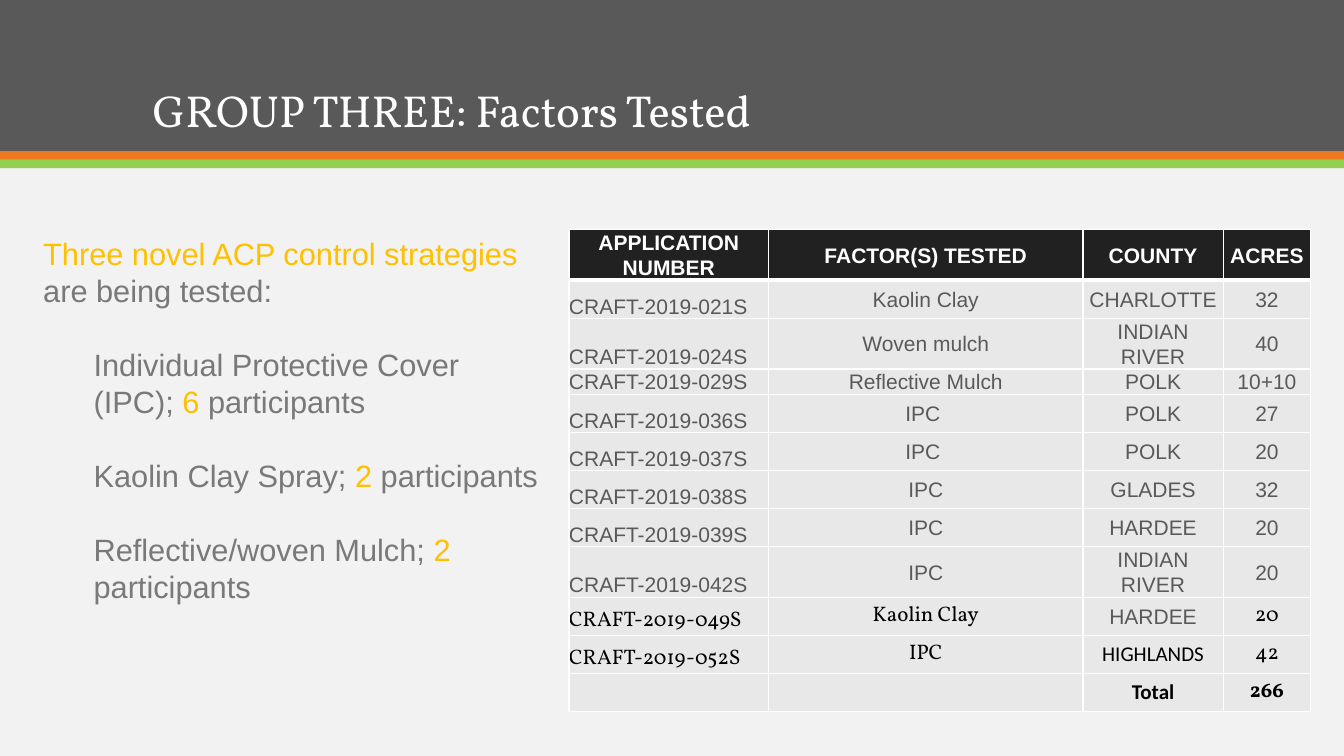
from lxml.etree import SubElement
from pptx import Presentation
from pptx.dml.color import RGBColor
from pptx.enum.shapes import MSO_SHAPE
from pptx.enum.text import MSO_ANCHOR, PP_ALIGN
from pptx.oxml.ns import qn
from pptx.util import Pt

WHITE = RGBColor(0xFF, 0xFF, 0xFF)
BLACK = RGBColor(0, 0, 0)
BACKGROUND = RGBColor(0xF2, 0xF2, 0xF2)
DARK_GRAY = RGBColor(0x59, 0x59, 0x59)
TEXT_GRAY = RGBColor(0x79, 0x79, 0x79)
ORANGE = RGBColor(0xEF, 0x79, 0x20)
GREEN = RGBColor(0x92, 0xD0, 0x50)
GOLD = RGBColor(0xFF, 0xC0, 0x00)
HEADER_FILL = RGBColor(0x21, 0x21, 0x21)
CELL_FILL = RGBColor(0xE8, 0xE8, 0xE8)

TITLE = "GROUP THREE: Factors Tested"
BANDS = [(0, 108, DARK_GRAY), (108, 6.3, ORANGE), (113.8, 6.3, GREEN)]
STRATEGIES = [
    [("Three novel ACP control strategies ", GOLD), ("are being tested:", TEXT_GRAY)],
    [("Individual Protective Cover (IPC); ", TEXT_GRAY), ("6", GOLD), (" participants", TEXT_GRAY)],
    [("Kaolin Clay Spray; ", TEXT_GRAY), ("2", GOLD), (" participants", TEXT_GRAY)],
    [("Reflective/woven Mulch; ", TEXT_GRAY), ("2", GOLD), (" participants", TEXT_GRAY)],
]
APPLICATIONS = [
    ("APPLICATION NUMBER", "FACTOR(S) TESTED", "COUNTY", "ACRES"),
    ("CRAFT-2019-021S", "Kaolin Clay", "CHARLOTTE", "32"),
    ("CRAFT-2019-024S", "Woven mulch", "INDIAN RIVER", "40"),
    ("CRAFT-2019-029S", "Reflective Mulch", "POLK", "10+10"),
    ("CRAFT-2019-036S", "IPC ", "POLK", "27"),
    ("CRAFT-2019-037S", "IPC ", "POLK", "20"),
    ("CRAFT-2019-038S", "IPC", "GLADES", "32"),
    ("CRAFT-2019-039S", "IPC", "HARDEE", "20"),
    ("CRAFT-2019-042S", "IPC", "INDIAN RIVER", "20"),
    ("CRAFT-2019-049S", "Kaolin Clay", "HARDEE", "20"),
    ("CRAFT-2019-052S", "IPC", "HIGHLANDS", "42"),
    ("", "", "Total", "266"),
]
COLUMN_WIDTHS = [142.6, 224.6, 100.1, 62.6]
ROW_HEIGHT = 27.2
SPECIAL_HEIGHTS = {0: 36, 2: 36.2, 3: 18, 8: 36.2}
FIRST_LATE_ROW = 9
TOTAL_ROW = 11
COUNTY_COLUMN = 2
LINE_FACTOR = 1.2


def add_run(paragraph, text, size, font_name, color, bold=False):
    run = paragraph.add_run()
    run.text = text
    run.font.size = Pt(size)
    run.font.name = font_name
    run.font.color.rgb = color
    run.font.bold = bold


def add_text_frame(slide, left, top, width, height):
    frame = slide.shapes.add_textbox(Pt(left), Pt(top), Pt(width), Pt(height)).text_frame
    frame.word_wrap = True
    return frame


def cell_font(row, column):
    if row == 0:
        return "Arial", WHITE
    if row < FIRST_LATE_ROW or (row, column) == (FIRST_LATE_ROW, COUNTY_COLUMN):
        return "Arial", DARK_GRAY
    return ("Calibri" if column == COUNTY_COLUMN else "Vollkorn"), BLACK


def add_borders(cell, row):
    properties = cell._tc.get_or_add_tcPr()
    widths = {"lnL": 1, "lnR": 1, "lnT": 3 if row == 1 else 1, "lnB": 3 if row == 0 else 1}
    for index, (side, width) in enumerate(widths.items()):
        line = SubElement(properties, qn("a:" + side), w=str(Pt(width)))
        fill = SubElement(line, qn("a:solidFill"))
        SubElement(fill, qn("a:srgbClr"), val=str(WHITE))
        properties.insert(index, line)


def fill_cell(cell, text, row, column):
    cell.fill.solid()
    cell.fill.fore_color.rgb = HEADER_FILL if row == 0 else CELL_FILL
    cell.margin_left = cell.margin_right = cell.margin_top = cell.margin_bottom = 0
    number_cell = row > 0 and column == 0
    cell.vertical_anchor = MSO_ANCHOR.BOTTOM if number_cell else MSO_ANCHOR.MIDDLE
    add_borders(cell, row)
    if text:
        paragraph = cell.text_frame.paragraphs[0]
        paragraph.alignment = PP_ALIGN.LEFT if number_cell else PP_ALIGN.CENTER
        font_name, color = cell_font(row, column)
        if font_name == "Arial":
            paragraph.line_spacing = Pt(15 * LINE_FACTOR)
        add_run(paragraph, text, 15, font_name, color, row in (0, TOTAL_ROW))


def add_bands(slide):
    for top, height, color in BANDS:
        band = slide.shapes.add_shape(MSO_SHAPE.RECTANGLE, 0, Pt(top), Pt(960), Pt(height))
        band.shadow.inherit = False
        band.fill.solid()
        band.fill.fore_color.rgb = color
        band.line.fill.background()


def add_title(slide):
    frame = add_text_frame(slide, 102, 20.2, 756, 81.4)
    frame.vertical_anchor = MSO_ANCHOR.BOTTOM
    frame.paragraphs[0].line_spacing = 0.9
    add_run(frame.paragraphs[0], TITLE, 32, "Vollkorn", WHITE)


def add_strategies(slide):
    frame = add_text_frame(slide, 23.8, 164.2, 368, 327)
    for index, runs in enumerate(STRATEGIES):
        paragraph = frame.add_paragraph() if index else frame.paragraphs[0]
        paragraph.line_spacing = Pt(22 * LINE_FACTOR)
        if index:
            paragraph.space_before = Pt(22 * LINE_FACTOR)
            paragraph.level = 1
            paragraph._p.get_or_add_pPr().set("marL", str(Pt(36)))
        for text, color in runs:
            add_run(paragraph, text, 22, "Arial", color)


def add_applications(slide):
    heights = [SPECIAL_HEIGHTS.get(row, ROW_HEIGHT) for row in range(len(APPLICATIONS))]
    table = slide.shapes.add_table(
        len(APPLICATIONS), len(COLUMN_WIDTHS),
        Pt(406.4), Pt(164.2), Pt(sum(COLUMN_WIDTHS)), Pt(sum(heights)),
    ).table
    table.horz_banding = False
    for column, width in zip(table.columns, COLUMN_WIDTHS):
        column.width = Pt(width)
    for row, (height, texts) in enumerate(zip(heights, APPLICATIONS)):
        table.rows[row].height = Pt(height)
        for column, text in enumerate(texts):
            fill_cell(table.cell(row, column), text, row, column)


def main():
    presentation = Presentation()
    presentation.slide_width = Pt(960)
    presentation.slide_height = Pt(540)
    slide = presentation.slides.add_slide(presentation.slide_layouts[6])
    slide.background.fill.solid()
    slide.background.fill.fore_color.rgb = BACKGROUND
    add_bands(slide)
    add_title(slide)
    add_strategies(slide)
    add_applications(slide)
    presentation.save("out.pptx")


if __name__ == "__main__":
    main()
